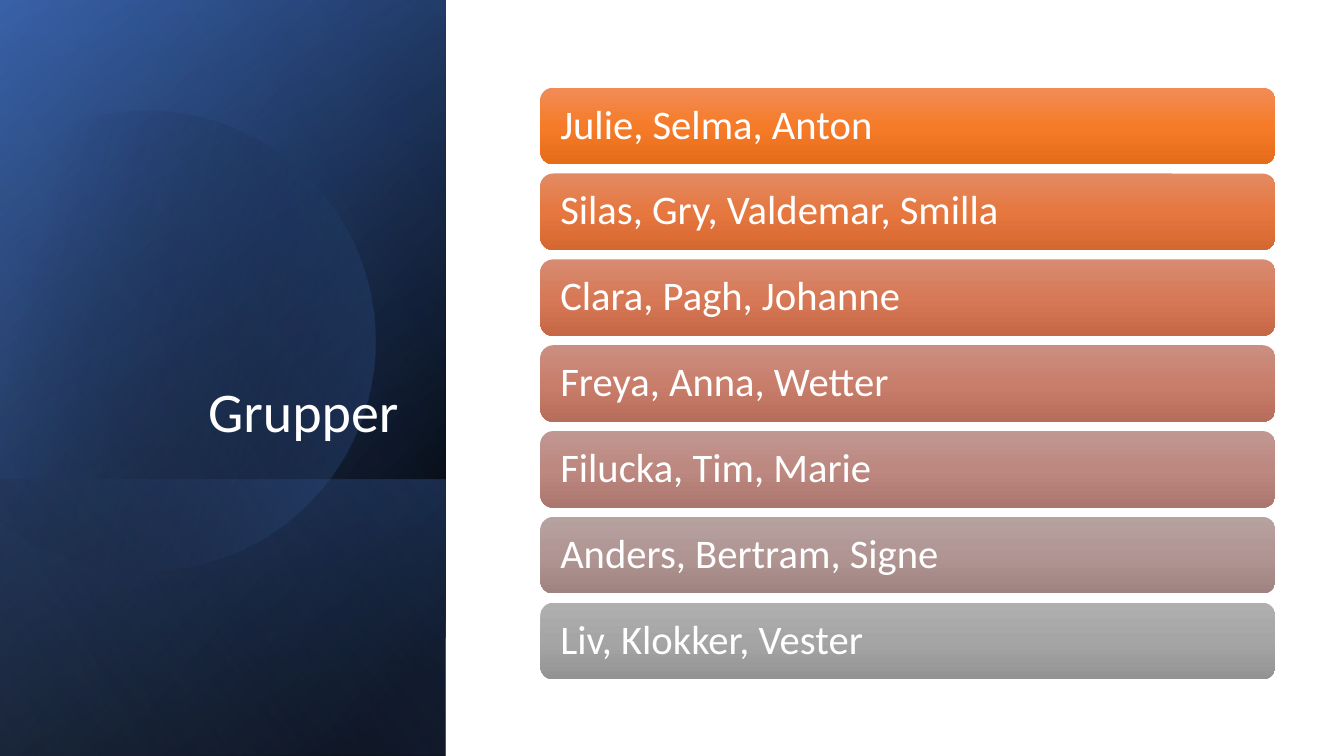
from math import cos, radians, sin

from pptx import Presentation
from pptx.dml.color import RGBColor
from pptx.enum.shapes import MSO_SHAPE as Shape
from pptx.enum.text import MSO_ANCHOR as Anchor, PP_ALIGN as Align
from pptx.oxml import parse_xml
from pptx.oxml.ns import nsdecls, qn
from pptx.util import Inches, Pt

GROUPS = [
    ("Julie, Selma, Anton", ("F18C57", "F67B28", "E56C19")),
    ("Silas, Gry, Valdemar, Smilla", ("E38A63", "E6773F", "D56730")),
    ("Clara, Pagh, Johanne", ("D78B72", "D77956", "C66846")),
    ("Freya, Anna, Wetter", ("CB8F81", "C97E6B", "B76D5B")),
    ("Filucka, Tim, Marie", ("C19791", "BC8880", "AA766E")),
    ("Anders, Bertram, Signe", ("B7A2A0", "B09593", "9E8381")),
    ("Liv, Klokker, Vester", ("AFAFAF", "A5A5A5", "939393")),
]

DISC_START = (1.49, 1.1)
DISC_RIGHT = [
    ((2.46, 1.12), (3.35, 1.77), (3.63, 2.75)),
    ((3.98, 3.97), (3.28, 5.23), (2.07, 5.58)),
    ((1.31, 5.8), (0.53, 5.61), (-0.03, 5.14)),
]
DISC_EDGE = [(-0.15, 5.03), (-0.15, 1.75), (0, 1.61)]
DISC_TOP = [
    ((0.23, 1.42), (0.5, 1.28), (0.8, 1.19)),
    ((1.03, 1.13), (1.26, 1.1), DISC_START),
]
DISC_CENTRE = (1.585, 3.345)
DISC_TILT = 16.1


def color(hex_text):
    """Turn a hex string into a colour."""
    return RGBColor.from_string(hex_text)


def fill_gradient(shape, stops, angle):
    """Fill a shape with (position, colour, opacity) stops and no outline."""
    shape.shadow.inherit = False
    shape.line.fill.background()
    shape.fill.background()
    marks = "".join(
        f'<a:gs pos="{position * 1000}"><a:srgbClr val="{tone}">'
        f'<a:alpha val="{opacity * 1000}"/></a:srgbClr></a:gs>'
        for position, tone, opacity in stops
    )
    gradient = parse_xml(
        f'<a:gradFill {nsdecls("a")} rotWithShape="1"><a:gsLst>{marks}</a:gsLst>'
        f'<a:lin ang="{angle * 60000}" scaled="0"/></a:gradFill>'
    )
    properties = shape._element.spPr
    properties.replace(properties.find(qn("a:noFill")), gradient)


def write(shape, words, size):
    """Set one line of white text in a shape and return its paragraph."""
    frame = shape.text_frame
    frame.word_wrap = True
    frame.text = words
    paragraph = frame.paragraphs[0]
    paragraph.line_spacing = 0.9
    font = paragraph.runs[0].font
    font.name, font.size, font.color.rgb = "Calibri", Pt(size), color("FFFFFF")
    return paragraph


def add_shade(slide, left, top, width, height, stops, angle):
    """Cover a box with a mirrored rectangle turned a quarter."""
    shift = (width - height) / 2
    shade = slide.shapes.add_shape(
        Shape.RECTANGLE, Inches(left + shift), Inches(top - shift), Inches(height), Inches(width)
    )
    shade.rotation = 90
    shade._element.spPr.xfrm.set("flipH", "1")
    fill_gradient(shade, stops, angle)


def curve(start, bends, steps=24):
    """List points along a chain of cubic curves."""
    points = []
    for first, second, end in bends:
        for step in range(1, steps + 1):
            t = step / steps
            weights = ((1 - t) ** 3, 3 * t * (1 - t) ** 2, 3 * t * t * (1 - t), t**3)
            corners = (start, first, second, end)
            points.append(tuple(
                sum(w * corner[axis] for w, corner in zip(weights, corners)) for axis in (0, 1)
            ))
        start = end
    return points


def add_disc(slide, left, top):
    """Draw the tilted, cut-off disc in the panel at the given corner."""
    outline = [DISC_START, *curve(DISC_START, DISC_RIGHT), *DISC_EDGE]
    outline += curve(DISC_EDGE[-1], DISC_TOP)
    turn = radians(DISC_TILT)
    centre_x, centre_y = DISC_CENTRE
    level = []
    for x, y in outline:
        dx, dy = x - centre_x, y - centre_y
        level.append((
            Inches(left + centre_x + dx * cos(turn) - dy * sin(turn)),
            Inches(top + centre_y + dx * sin(turn) + dy * cos(turn)),
        ))
    builder = slide.shapes.build_freeform(*level[0])
    builder.add_line_segments(level[1:], close=True)
    disc = builder.convert_to_shape()
    disc.rotation = 360 - DISC_TILT
    fill_gradient(disc, [(29, "000000", 0), (100, "4472C4", 43)], 30)


def add_title_panel(slide, left, top, width, height):
    """Build the dark panel with its title."""
    panel = (left, top, width, height)
    foot = 2.74
    add_shade(slide, *panel, [(8, "000000", 100), (100, "2F5597", 100)], 50)
    add_shade(slide, *panel, [(0, "000000", 0), (99, "4472C4", 46)], 30)
    add_shade(slide, left, top + height - foot, width, foot,
              [(2, "4472C4", 29), (100, "000000", 30)], 130)
    add_disc(slide, left, top)
    add_shade(slide, *panel, [(0, "000000", 0), (99, "8FAADC", 11)], 120)
    title = slide.shapes.add_textbox(
        Inches(left + 0.64), Inches(top + 1.84), Inches(3.41), Inches(2.62)
    )
    title.text_frame.vertical_anchor = Anchor.BOTTOM
    write(title, "Grupper", 40).alignment = Align.RIGHT


def add_group_list(slide, left, top, width, height):
    """Stack one rounded bar per group, evenly spaced in the box."""
    bar_height = 0.76
    pitch = (height - bar_height) / (len(GROUPS) - 1)
    for row, (members, tones) in enumerate(GROUPS):
        bar = slide.shapes.add_shape(
            Shape.ROUNDED_RECTANGLE, Inches(left), Inches(top + row * pitch),
            Inches(width), Inches(bar_height)
        )
        fill_gradient(bar, [(place, tone, 100) for place, tone in zip((0, 50, 100), tones)], 90)
        frame = bar.text_frame
        frame.margin_left = frame.margin_right = Inches(0.16)
        frame.vertical_anchor = Anchor.MIDDLE
        write(bar, members, 29).alignment = Align.LEFT


def main():
    """Build and save the slide."""
    deck = Presentation()
    deck.slide_width, deck.slide_height = Inches(13.33), Inches(7.5)
    slide = deck.slides.add_slide(deck.slide_layouts[6])
    add_title_panel(slide, 0, 0, 4.42, 7.5)
    add_group_list(slide, 5.36, 0.87, 7.29, 5.87)
    deck.save("out.pptx")


if __name__ == "__main__":
    main()
